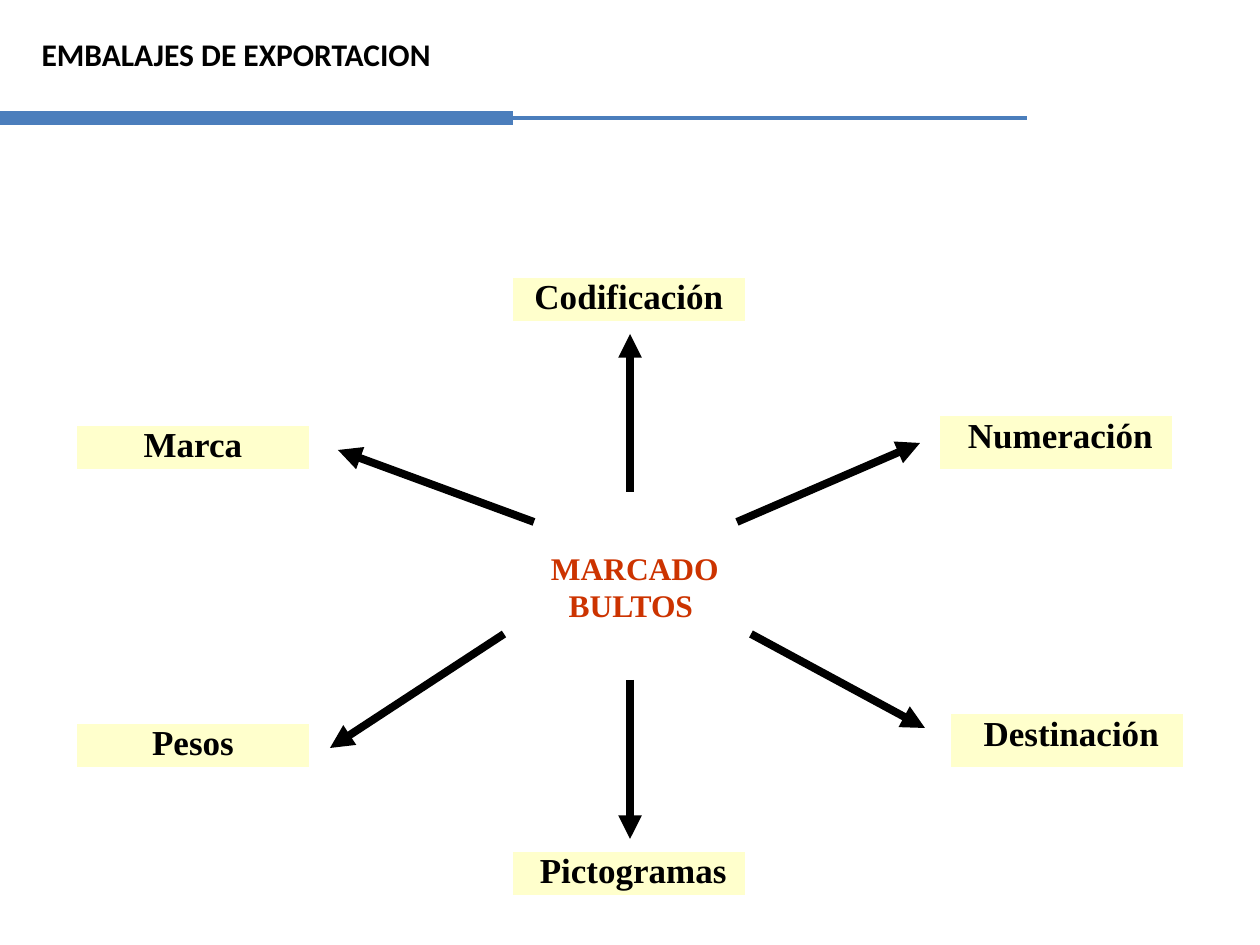
from lxml import etree
from pptx import Presentation
from pptx.dml.color import RGBColor
from pptx.enum.shapes import MSO_CONNECTOR, MSO_SHAPE
from pptx.enum.text import MSO_ANCHOR, PP_ALIGN
from pptx.oxml.ns import qn
from pptx.util import Emu, Pt

LINE = MSO_CONNECTOR.STRAIGHT
RECT, OVAL = MSO_SHAPE.RECTANGLE, MSO_SHAPE.OVAL
MID, TOP = MSO_ANCHOR.MIDDLE, MSO_ANCHOR.TOP
CENTER, LEFT = PP_ALIGN.CENTER, PP_ALIGN.LEFT

THEME = {
    "ink": "000000", "paper": "FFFFFF", "label": "FFFFCC",
    "hub": "CC3300", "rule": "4B7EBC",
    "head": "Calibri", "body": "Times New Roman",
    "title": 18, "core": 18, "text": 20,
    "edge": 3, "arrow": 4.5, "thin": 1.75, "thick": 8,
}

TITLE = ("EMBALAJES DE EXPORTACION", (29, 29, 418, 50))
HUB = ([" MARCADO", "BULTOS"], (512, 512, 238, 149))
WIDTH = 238
LABELS = [
    (" Numeración", 937, 413, 59),
    ("Marca", 74, 423, 49),
    ("Codificación", 510, 275, 49),
    ("Pesos", 74, 721, 49),
    (" Destinación", 948, 711, 59),
    (" Pictogramas", 510, 849, 49),
]
ARROWS = [
    (737, 522, 920, 443),
    (534, 522, 338, 450),
    (630, 492, 630, 334),
    (630, 680, 630, 839),
    (751, 634, 925, 728),
    (504, 634, 330, 748),
]
RULES = [(1027, "thin"), (513, "thick")]
RULE_Y = 118


def px(n):
    return Emu(round(n * 914400 / 126))


def tint(name):
    return RGBColor.from_string(THEME[name])


def write(frame, lines, font, size, color, align):
    for i, line in enumerate(lines):
        para = frame.paragraphs[0] if i == 0 else frame.add_paragraph()
        para.alignment = align
        run = para.add_run()
        run.text = line
        run.font.name = THEME[font]
        run.font.size = Pt(THEME[size])
        run.font.bold = True
        run.font.color.rgb = tint(color)


def add_box(slide, kind, place, fill):
    box = slide.shapes.add_shape(kind, *map(px, place))
    box.shadow.inherit = False
    box.fill.solid()
    box.fill.fore_color.rgb = tint(fill)
    box.line.color.rgb = tint("paper")
    box.line.width = Pt(THEME["edge"])
    return box


def add_line(slide, ends, color, width, arrow=False):
    link = slide.shapes.add_connector(LINE, *map(px, ends))
    link.line.color.rgb = tint(color)
    link.line.width = Pt(THEME[width])
    if arrow:
        tip = etree.SubElement(link.line._get_or_add_ln(), qn("a:tailEnd"))
        tip.set("type", "triangle")
    etree.SubElement(link._element.spPr, qn("a:effectLst"))


def add_title(slide):
    text, place = TITLE
    title = slide.shapes.title
    title.left, title.top, title.width, title.height = map(px, place)
    frame = title.text_frame
    frame.word_wrap = False
    frame.vertical_anchor = TOP
    write(frame, [text], "head", "title", "ink", LEFT)


def add_hub(slide):
    lines, place = HUB
    frame = add_box(slide, OVAL, place, "paper").text_frame
    frame.word_wrap = False
    frame.vertical_anchor = MID
    write(frame, lines, "body", "core", "hub", CENTER)


def add_label(slide, text, left, top, height):
    frame = add_box(slide, RECT, (left, top, WIDTH, height), "label").text_frame
    frame.margin_left = frame.margin_right = 0
    frame.margin_top = frame.margin_bottom = 0
    frame.word_wrap = True
    frame.vertical_anchor = TOP
    write(frame, [text], "body", "text", "ink", CENTER)


def main():
    deck = Presentation()
    deck.slide_width, deck.slide_height = px(1260), px(945)
    slide = deck.slides.add_slide(deck.slide_layouts[5])
    add_title(slide)
    add_hub(slide)
    for label in LABELS:
        add_label(slide, *label)
    for ends in ARROWS:
        add_line(slide, ends, "ink", "arrow", True)
    for right, width in RULES:
        add_line(slide, (0, RULE_Y, right, RULE_Y), "rule", width)
    deck.save("out.pptx")


if __name__ == "__main__":
    main()
